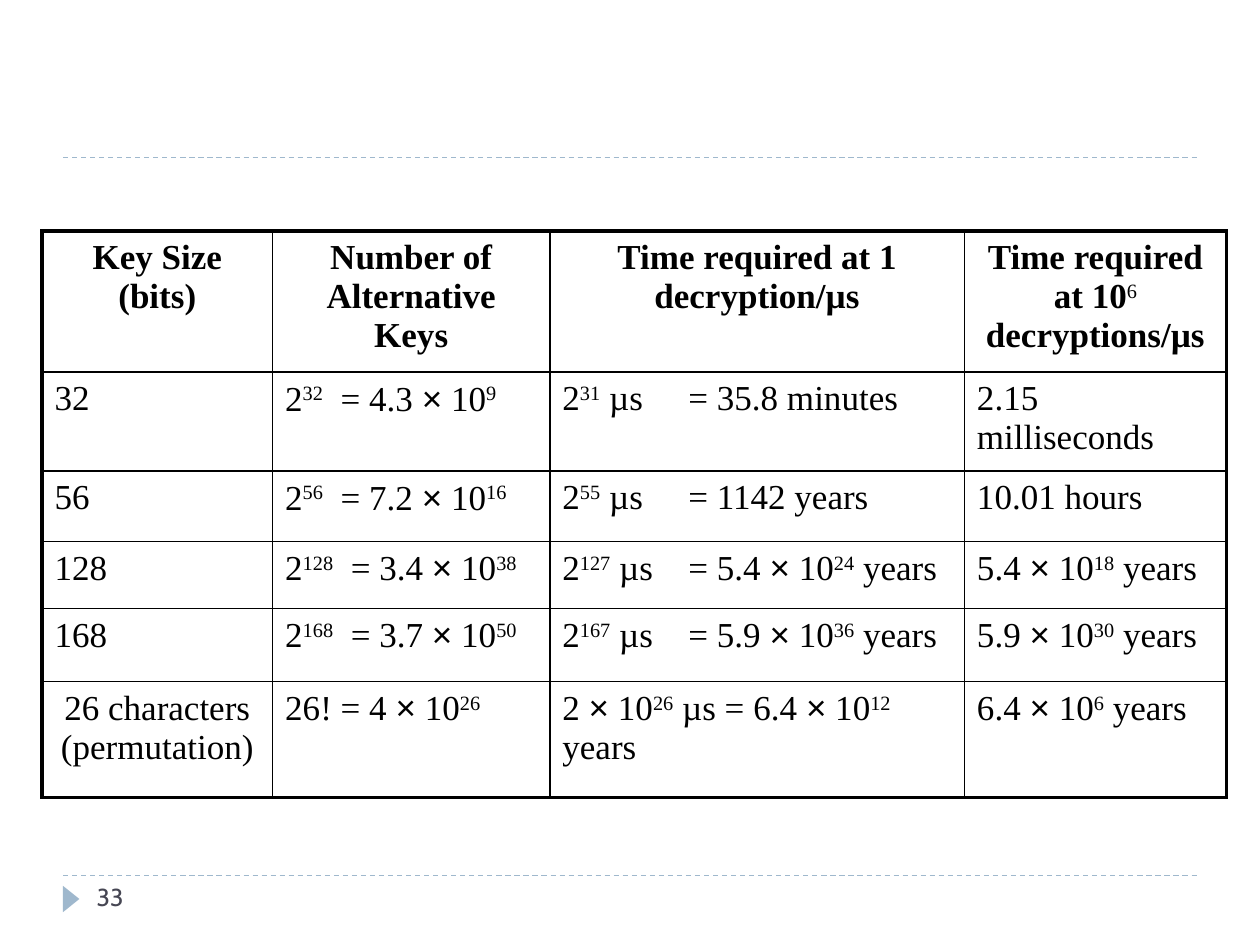
from pptx import Presentation
from pptx.dml.color import RGBColor as Rgb
from pptx.enum.dml import MSO_LINE as Dash
from pptx.enum.shapes import MSO_CONNECTOR as Conn, MSO_SHAPE as Form
from pptx.enum.text import PP_ALIGN as Align
from pptx.oxml.ns import qn
from pptx.util import Pt
from lxml.etree import SubElement as Sub

HEAD = ["Key Size (bits)", "Number of Alternative Keys",
        "Time required at 1 decryption/µs",
        "Time required at 10^6^ decryptions/µs"]
BODY = [
    ["32", "2^32^  = 4.3 × 10^9^", "2^31^ µs\t= 35.8 minutes",
     "2.15 milliseconds"],
    ["56", "2^56^  = 7.2 × 10^16^", "2^55^ µs\t= 1142 years",
     "10.01 hours"],
    ["128", "2^128^  = 3.4 × 10^38^", "2^127^ µs\t= 5.4 × 10^24^ years",
     "5.4 × 10^18^ years"],
    ["168", "2^168^  = 3.7 × 10^50^", "2^167^ µs\t= 5.9 × 10^36^ years",
     "5.9 × 10^30^ years"],
    ["26 characters (permutation)", "26! = 4 × 10^26^",
     "2 × 10^26^ µs = 6.4 × 10^12^ years", "6.4 × 10^6^ years"],
]
PAGE = "33"
COLS = [131.8, 158.4, 236.9, 149.8]
ROWS = [68.4, 40.3, 40.3, 38.2, 41.8, 66.2]
RULES = [90, 500.4]
THEME = {
    "ink": "000000", "rule": "9FB8CD", "page": "464653",
    "serif": "Times New Roman", "sign": "Arial", "sans": "Cabin",
    "cell": 20, "note": 14, "thin": 1, "thick": 2.25,
}


def tint(name):
    return Rgb.from_string(THEME[name])


def split(text):
    for i, part in enumerate(text.split("^")):
        for j, bit in enumerate(part.split("×")):
            if j:
                yield "×", False
            if bit:
                yield bit, i % 2 == 1


def write(para, text, bold):
    for bit, high in split(text):
        run = para.add_run()
        run.text = bit
        font = run.font
        font.name = THEME["sign" if bit == "×" else "serif"]
        font.size = Pt(THEME["cell"])
        font.color.rgb = tint("ink")
        font.bold = bold and not high
        if high:
            font._element.set("baseline", "30000")


def border(cell, edges):
    props = cell._tc.get_or_add_tcPr()
    for side, outer in edges.items():
        wide = THEME["thick" if outer else "thin"]
        line = Sub(props, qn(f"a:ln{side}"), w=str(Pt(wide)))
        fill = Sub(line, qn("a:solidFill"))
        Sub(fill, qn("a:srgbClr"), val=THEME["ink"])


def add_grid(slide):
    data = [HEAD] + BODY
    last, end = len(ROWS) - 1, len(COLS) - 1
    table = slide.shapes.add_table(
        len(ROWS), len(COLS), Pt(24), Pt(132),
        Pt(sum(COLS)), Pt(sum(ROWS))).table
    table.first_row = table.horz_banding = False
    for col, wide in zip(table.columns, COLS):
        col.width = Pt(wide)
    for r, (row, texts) in enumerate(zip(table.rows, data)):
        row.height = Pt(ROWS[r])
        for c, text in enumerate(texts):
            cell = table.cell(r, c)
            border(cell, {"L": c == 0, "R": c == end,
                          "T": r == 0, "B": r == last})
            cell.fill.background()
            cell.margin_left = cell.margin_right = Pt(7.2)
            cell.margin_top = cell.margin_bottom = Pt(4.3)
            para = cell.text_frame.paragraphs[0]
            para.space_before = para.space_after = Pt(3)
            mid = r == 0 or (r == last and c == 0)
            para.alignment = Align.CENTER if mid else Align.LEFT
            write(para, text, r == 0)


def add_frame(slide):
    for y in RULES:
        rule = slide.shapes.add_connector(
            Conn.STRAIGHT, Pt(36), Pt(y), Pt(684), Pt(y))
        rule.line.color.rgb = tint("rule")
        rule.line.width = Pt(0.75)
        rule.line.dash_style = Dash.DASH
        Sub(rule._element.spPr, qn("a:effectLst"))
    mark = slide.shapes.add_shape(
        Form.ISOSCELES_TRIANGLE, Pt(33.1), Pt(509), Pt(15.1), Pt(9.4))
    mark.rotation = 90
    mark.shadow.inherit = False
    mark.fill.solid()
    mark.fill.fore_color.rgb = tint("rule")
    mark.line.fill.background()
    box = slide.shapes.add_textbox(Pt(48.2), Pt(500.4), Pt(156.2), Pt(28.8))
    box.text_frame.word_wrap = True
    para = box.text_frame.paragraphs[0]
    para.text = PAGE
    para.font.name = THEME["sans"]
    para.font.size = Pt(THEME["note"])
    para.font.color.rgb = tint("page")


def main():
    deck = Presentation()
    deck.slide_width, deck.slide_height = Pt(720), Pt(540)
    slide = deck.slides.add_slide(deck.slide_layouts[6])
    add_frame(slide)
    add_grid(slide)
    deck.save("out.pptx")


if __name__ == "__main__":
    main()
